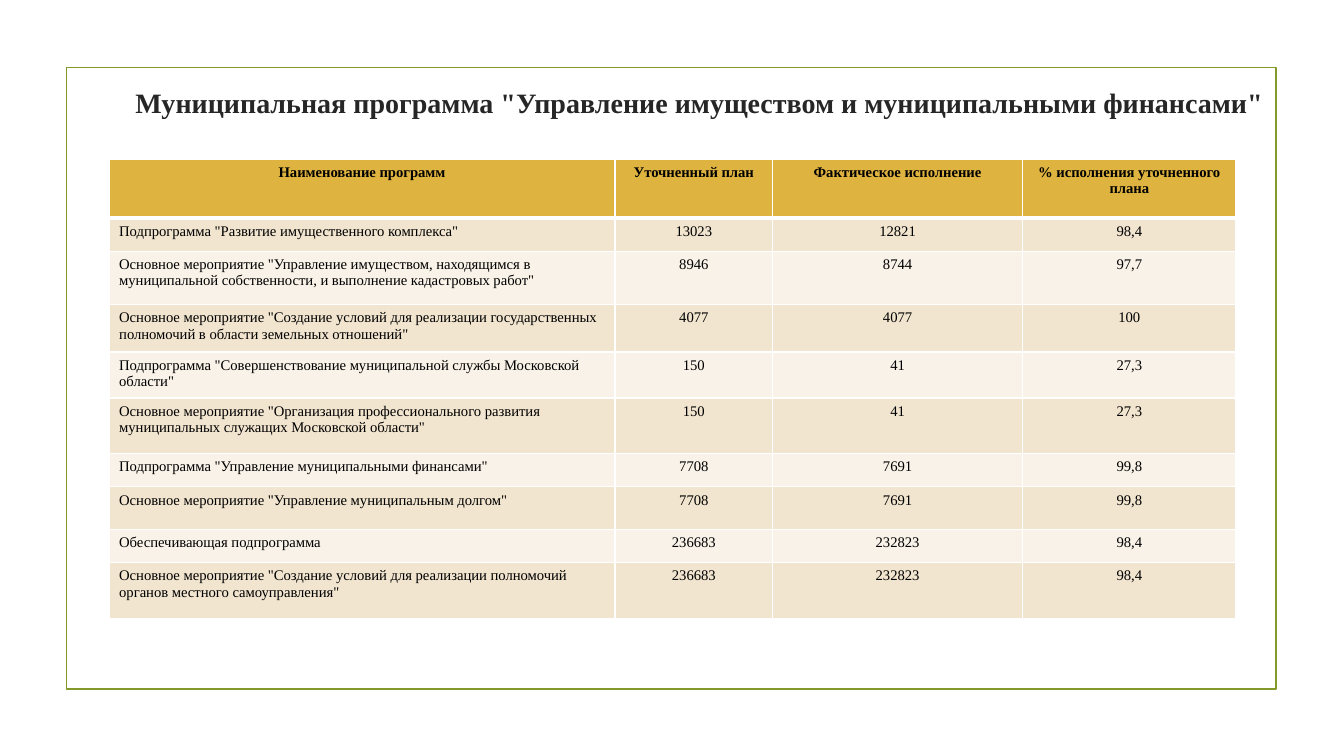
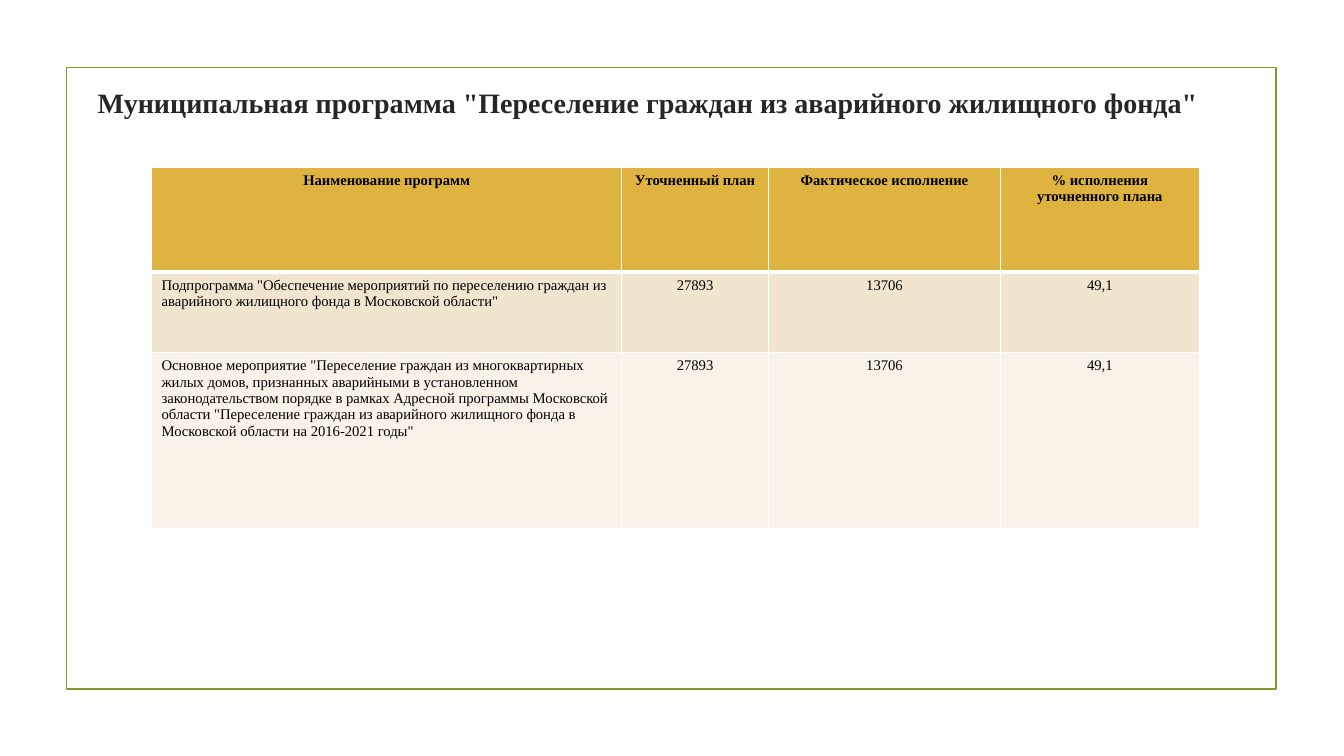
from dataclasses import dataclass

from lxml.etree import SubElement as Sub
from pptx import Presentation
from pptx.dml.color import RGBColor as Rgb
from pptx.enum.shapes import MSO_SHAPE as Shape
from pptx.enum.text import MSO_ANCHOR as Anchor
from pptx.enum.text import MSO_AUTO_SIZE as Fit
from pptx.enum.text import PP_ALIGN as Align
from pptx.oxml.ns import qn
from pptx.util import Cm, Pt


@dataclass(frozen=True)
class Theme:
    font: str = "Times New Roman"
    olive: str = "83992A"
    ink: str = "262626"
    black: str = "000000"
    white: str = "FFFFFF"
    gold: str = "DEB340"
    bands: tuple = ("F2E5CF", "F9F2E8")
    head: float = 20
    body: float = 10.5
    thin: float = 1
    thick: float = 3
    edge: float = 1.25


HEADS = (
    "Наименование программ",
    "Уточненный план",
    "Фактическое исполнение",
    "% исполнения уточненного плана",
)
COLS = (12.75, 3.97, 6.3, 5.38)

ASSETS = (
    (1.47, HEADS),
    (0.84, ('Подпрограмма "Развитие имущественного комплекса"', "13023", "12821", "98,4")),
    (1.35, ('Основное мероприятие "Управление имуществом, находящимся в муниципальной '
            'собственности, и выполнение кадастровых работ"', "8946", "8744", "97,7")),
    (1.19, ('Основное мероприятие "Создание условий для реализации государственных '
            'полномочий в области земельных отношений"', "4077", "4077", "100")),
    (1.16, ('Подпрограмма "Совершенствование муниципальной службы Московской области"',
            "150", "41", "27,3")),
    (1.4, ('Основное мероприятие "Организация профессионального развития '
           'муниципальных служащих Московской области"', "150", "41", "27,3")),
    (0.84, ('Подпрограмма "Управление муниципальными финансами"', "7708", "7691", "99,8")),
    (1.07, ('Основное мероприятие "Управление муниципальным долгом"', "7708", "7691", "99,8")),
    (0.84, ("Обеспечивающая подпрограмма", "236683", "232823", "98,4")),
    (1.4, ('Основное мероприятие "Создание условий для реализации полномочий '
           'органов местного самоуправления"', "236683", "232823", "98,4")),
)

HOUSING = (
    (2.64, HEADS),
    (2.03, ('Подпрограмма "Обеспечение мероприятий по переселению граждан из '
            'аварийного жилищного фонда в Московской области"', "27893", "13706", "49,1")),
    (4.42, ('Основное мероприятие "Переселение граждан из многоквартирных жилых домов, '
            'признанных аварийными в установленном законодательством порядке в рамках '
            'Адресной программы Московской области "Переселение граждан из аварийного '
            'жилищного фонда в Московской области на 2016-2021 годы"',
            "27893", "13706", "49,1")),
)


class Deck:
    def __init__(self, theme):
        self.theme = theme
        self.deck = Presentation()
        self.deck.slide_width = Cm(33.87)
        self.deck.slide_height = Cm(19.05)
        self.slide = None

    def start(self):
        self.slide = self.deck.slides.add_slide(self.deck.slide_layouts[5])
        self.frame()

    def frame(self):
        box = self.slide.shapes.add_shape(
            Shape.RECTANGLE, Cm(1.68), Cm(1.7), Cm(30.48), Cm(15.67))
        box.shadow.inherit = False
        box.fill.background()
        box.line.color.rgb = Rgb.from_string(self.theme.olive)
        box.line.width = Pt(self.theme.edge)

    def label(self, para, text, size, tint, bold):
        run = para.add_run()
        run.text = text
        font = run.font
        font.name = self.theme.font
        font.size = Pt(size)
        font.bold = bold
        font.color.rgb = Rgb.from_string(tint)

    def title(self, text, left, width):
        box = self.slide.shapes.title
        box.left, box.top = Cm(left), Cm(2.13)
        box.width, box.height = Cm(width), Cm(0.86)
        frame = box.text_frame
        frame.margin_left = frame.margin_right = 0
        frame.margin_top = frame.margin_bottom = 0
        frame.word_wrap = True
        frame.auto_size = Fit.SHAPE_TO_FIT_TEXT
        frame.vertical_anchor = Anchor.MIDDLE
        para = frame.paragraphs[0]
        para.alignment = Align.CENTER
        para.line_spacing = 1.02
        para.space_before = Pt(0)
        props = para._p.get_or_add_pPr()
        props.set("marL", str(Cm(0.03)))
        props.set("indent", str(Cm(1.14)))
        self.label(para, text, self.theme.head, self.theme.ink, True)

    def rule(self, cell, row):
        props = cell._tc.get_or_add_tcPr()
        for side in "LRTB":
            heavy = (side, row) in (("B", 0), ("T", 1))
            width = self.theme.thick if heavy else self.theme.thin
            line = Sub(props, qn("a:ln" + side), w=str(Pt(width)))
            fill = Sub(line, qn("a:solidFill"))
            Sub(fill, qn("a:srgbClr"), val=self.theme.white)

    def cell(self, cell, text, row, col):
        head = row == 0
        self.rule(cell, row)
        cell.fill.solid()
        tint = self.theme.gold if head else self.theme.bands[(row - 1) % 2]
        cell.fill.fore_color.rgb = Rgb.from_string(tint)
        para = cell.text_frame.paragraphs[0]
        para.alignment = Align.CENTER if head or col else Align.LEFT
        self.label(para, text, self.theme.body, self.theme.black, head)

    def table(self, rows, left, top, width):
        high = sum(height for height, _ in rows)
        grid = self.slide.shapes.add_table(
            len(rows), len(COLS), Cm(left), Cm(top), Cm(width), Cm(high)).table
        grid.horz_banding = False
        for col, share in zip(grid.columns, COLS):
            col.width = Cm(width * share / sum(COLS))
        for row, (height, texts) in enumerate(rows):
            grid.rows[row].height = Cm(height)
            for col, text in enumerate(texts):
                self.cell(grid.cell(row, col), text, row, col)


def main():
    deck = Deck(Theme())

    deck.start()
    deck.title('Муниципальная программа "Управление имуществом и муниципальными финансами"',
               1.83, 30.43)
    deck.table(ASSETS, 2.75, 4.02, 28.4)

    deck.start()
    deck.title('Муниципальная программа "Переселение граждан из аварийного жилищного фонда"',
               1.27, 28.95)
    deck.table(HOUSING, 3.82, 4.22, 26.4)

    deck.deck.save("out.pptx")


if __name__ == "__main__":
    main()
